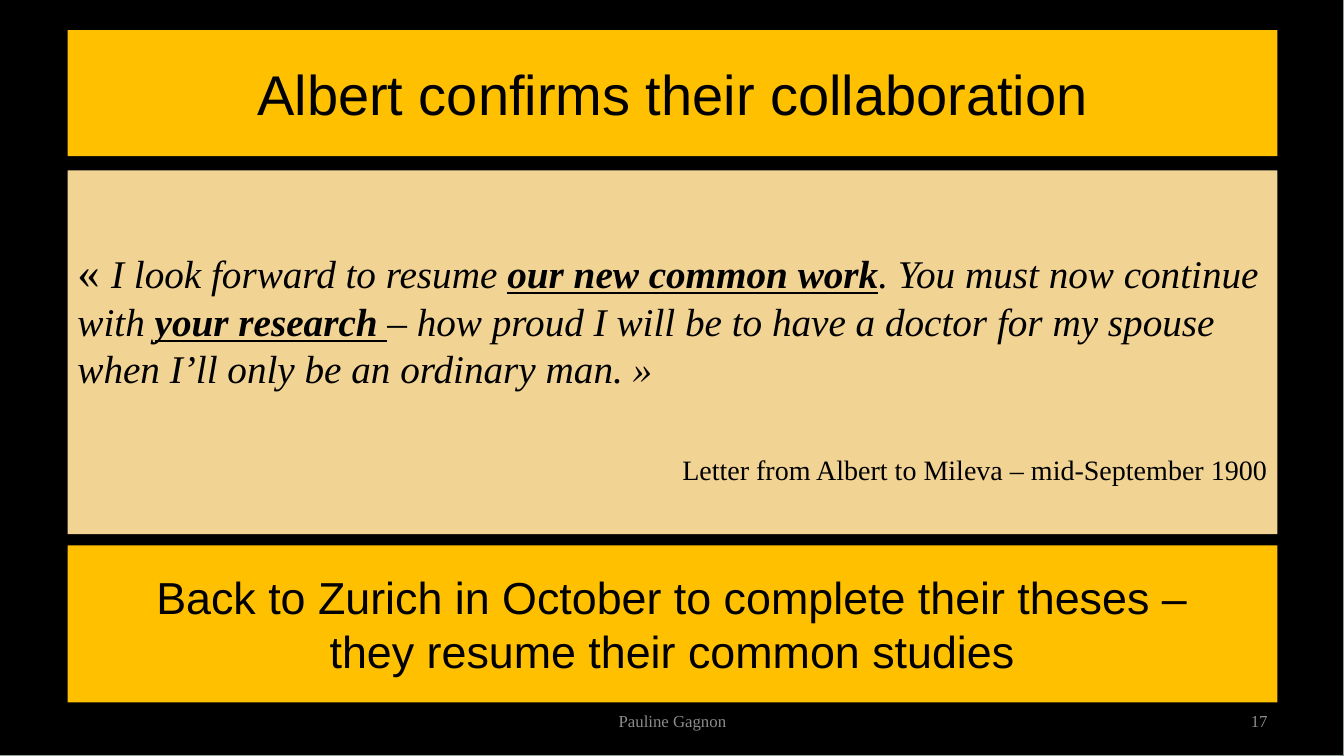
from pptx import Presentation
from pptx.dml.color import RGBColor
from pptx.enum.shapes import MSO_SHAPE
from pptx.enum.text import MSO_ANCHOR, PP_ALIGN
from pptx.util import Inches, Pt

RECTANGLE = MSO_SHAPE.RECTANGLE
TOP, MIDDLE = MSO_ANCHOR.TOP, MSO_ANCHOR.MIDDLE
LEFT, CENTER, RIGHT = PP_ALIGN.LEFT, PP_ALIGN.CENTER, PP_ALIGN.RIGHT
SANS, SERIF = "Arial", "Times New Roman"
BLACK, GOLD, SAND, GREY = "000000", "FFC000", "F1D394", "8C8C8C"
MARGIN, CONTENT_WIDTH = 0.67, 12

QUOTE = [
    ("I look forward to resume ", False),
    ("our new common work", True),
    (". You must now continue with ", False),
    ("your research ", True),
    ("– how proud I will be to have a doctor for my spouse "
     "when I’ll only be an ordinary man. »", False),
]


def rgb(value):
    """Turn a hex string into a colour."""
    return RGBColor.from_string(value)


def add_panel(slide, box, fill, border=None):
    """Add a flat filled rectangle and return it."""
    panel = slide.shapes.add_shape(RECTANGLE, *map(Inches, box))
    panel.shadow.inherit = False
    panel.fill.solid()
    panel.fill.fore_color.rgb = rgb(fill)
    if border:
        panel.line.color.rgb = rgb(border)
        panel.line.width = Pt(0.75)
    else:
        panel.line.fill.background()
    return panel


def style(paragraph, size, font, color=BLACK, align=CENTER):
    """Set the alignment and font of a paragraph."""
    paragraph.alignment = align
    paragraph.font.size = Pt(size)
    paragraph.font.name = font
    paragraph.font.color.rgb = rgb(color)


def add_banner(slide, box, lines, size):
    """Add a gold panel with centred lines of text."""
    frame = add_panel(slide, box, GOLD).text_frame
    frame.word_wrap = True
    frame.vertical_anchor = MIDDLE
    for index, line in enumerate(lines):
        paragraph = frame.paragraphs[0] if index == 0 else frame.add_paragraph()
        paragraph.text = line
        style(paragraph, size, SANS)


def add_quote(slide, box):
    """Add the letter excerpt and its attribution on a sand panel."""
    frame = add_panel(slide, box, SAND).text_frame
    frame.word_wrap = True
    frame.vertical_anchor = TOP
    frame.margin_top = Inches(0.73)

    excerpt = frame.paragraphs[0]
    style(excerpt, 28, SERIF, align=LEFT)
    opening = excerpt.add_run()
    opening.text = "« "
    opening.font.size = Pt(32)
    for words, emphasized in QUOTE:
        phrase = excerpt.add_run()
        phrase.text = words
        phrase.font.italic = True
        if emphasized:
            phrase.font.bold = True
            phrase.font.underline = True

    attribution = frame.add_paragraph()
    attribution.text = "Letter from Albert to Mileva – mid-September 1900"
    attribution.space_before = Pt(43)
    style(attribution, 20, SERIF, align=RIGHT)


def add_footer(slide, box, text, align):
    """Add a small grey footer text."""
    frame = slide.shapes.add_textbox(*map(Inches, box)).text_frame
    frame.word_wrap = True
    frame.vertical_anchor = MIDDLE
    frame.paragraphs[0].text = text
    style(frame.paragraphs[0], 12, SERIF, GREY, align)


def main():
    """Build the slide and save it."""
    deck = Presentation()
    deck.slide_width, deck.slide_height = Inches(13.33), Inches(7.5)
    slide = deck.slides.add_slide(deck.slide_layouts[6])
    slide.background.fill.solid()
    slide.background.fill.fore_color.rgb = rgb("3C3638")

    add_panel(slide, (0, 0, 13.33, 7.5), BLACK, border="8F9F96")
    add_banner(slide, (MARGIN, 0.3, CONTENT_WIDTH, 1.25),
               ["Albert confirms their collaboration"], 40)
    add_quote(slide, (MARGIN, 1.69, CONTENT_WIDTH, 3.61))
    add_banner(slide, (MARGIN, 5.41, CONTENT_WIDTH, 1.56),
               ["Back to Zurich in October to complete their theses –",
                "they resume their common studies"], 32)
    add_footer(slide, (9.56, 6.95, 3.11, 0.4), "17", RIGHT)
    add_footer(slide, (4.56, 6.95, 4.22, 0.4), "Pauline Gagnon", CENTER)
    deck.save("out.pptx")


if __name__ == "__main__":
    main()
